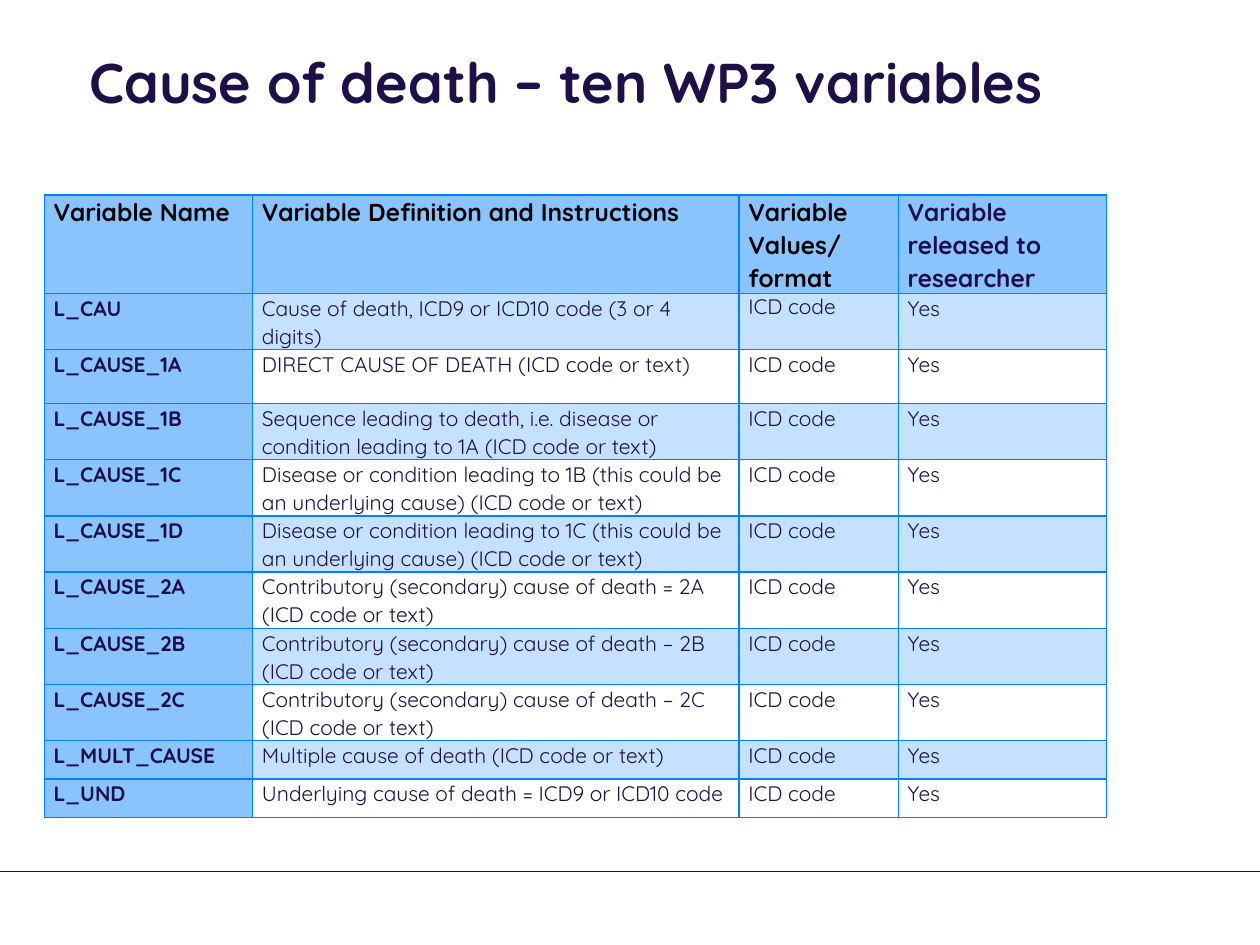
from lxml.etree import SubElement
from pptx import Presentation
from pptx.dml.color import RGBColor
from pptx.enum.shapes import MSO_CONNECTOR as Connector
from pptx.enum.text import MSO_ANCHOR as Anchor, MSO_AUTO_SIZE as AutoSize, PP_ALIGN as Align
from pptx.oxml.ns import qn
from pptx.util import Pt

NAVY, BLACK, WHITE = "1E0F49", "000000", "FFFFFF"
HEADER_BLUE, BAND_BLUE, BORDER_BLUE = "89C4FF", "C4E1FF", "0080FF"


def color(value):
    return RGBColor.from_string(value)


def style_font(paragraph, size, bold, value):
    font = paragraph.font
    font.name = "Quicksand"
    font.size = Pt(size)
    font.bold = bold
    font.color.rgb = color(value)


presentation = Presentation()
presentation.slide_width = Pt(720)
presentation.slide_height = Pt(540)
slide = presentation.slides.add_slide(presentation.slide_layouts[5])
slide.background.fill.solid()
slide.background.fill.fore_color.rgb = color(WHITE)

footer_line = slide.shapes.add_connector(Connector.STRAIGHT, Pt(0), Pt(498), Pt(720), Pt(498))
footer_line.line.color.rgb = color("1D0D49")
footer_line.line.width = Pt(0.25)
SubElement(footer_line.line._get_or_add_ln().getparent(), qn("a:effectLst"))

title = slide.shapes.title
title.left, title.top, title.width, title.height = Pt(44), Pt(21), Pt(595), Pt(51)
title.text_frame.text = "Cause of death – ten WP3 variables"
title.text_frame.word_wrap = True
title.text_frame.auto_size = AutoSize.NONE
title.text_frame.vertical_anchor = Anchor.MIDDLE
title_paragraph = title.text_frame.paragraphs[0]
title_paragraph.alignment = Align.LEFT
style_font(title_paragraph, 32, True, NAVY)

headers = ["Variable Name", "Variable Definition and Instructions",
           "Variable Values/ format", "Variable released to researcher"]
variables = [
    ("L_CAU", "Cause of death, ICD9 or ICD10 code (3 or 4 digits)"),
    ("L_CAUSE_1A", "DIRECT CAUSE OF DEATH (ICD code or text)"),
    ("L_CAUSE_1B", "Sequence leading to death, i.e. disease or condition leading to 1A (ICD code or text)"),
    ("L_CAUSE_1C", "Disease or condition leading to 1B (this could be an underlying cause) (ICD code or text)"),
    ("L_CAUSE_1D", "Disease or condition leading to 1C (this could be an underlying cause) (ICD code or text)"),
    ("L_CAUSE_2A", "Contributory (secondary) cause of death = 2A (ICD code or text)"),
    ("L_CAUSE_2B", "Contributory (secondary) cause of death – 2B (ICD code or text)"),
    ("L_CAUSE_2C", "Contributory (secondary) cause of death – 2C (ICD code or text)"),
    ("L_MULT_CAUSE", "Multiple cause of death (ICD code or text)"),
    ("L_UND", "Underlying cause of death = ICD9 or ICD10 code"),
]
rows = [headers] + [[name, definition, "ICD code", "Yes"] for name, definition in variables]
column_widths = [119, 278, 91, 119]
row_heights = [56, 32, 30.8] + [32] * 6 + [22] * 2

table = slide.shapes.add_table(len(rows), len(headers), Pt(25.3), Pt(111.4),
                               Pt(sum(column_widths)), Pt(sum(row_heights))).table
for column, width in zip(table.columns, column_widths):
    column.width = Pt(width)
for row, height in zip(table.rows, row_heights):
    row.height = Pt(height)

for row_index, texts in enumerate(rows):
    is_header = row_index == 0
    for column_index, text in enumerate(texts):
        cell = table.cell(row_index, column_index)
        cell.text = text
        cell.margin_left = cell.margin_right = Pt(5.4)
        cell.margin_top = cell.margin_bottom = Pt(0)
        is_label = is_header or column_index == 0

        paragraph = cell.text_frame.paragraphs[0]
        paragraph.line_spacing = 1 if (row_index, column_index) == (1, 2) else 1.07
        if column_index < 2:
            paragraph.space_after = Pt(8)
        text_color = BLACK if is_header and column_index < 3 else NAVY
        style_font(paragraph, 14 if is_header else 12, is_label, text_color)

        properties = cell._tc.get_or_add_tcPr()
        for side in ("a:lnL", "a:lnR", "a:lnT", "a:lnB"):
            border = SubElement(properties, qn(side), w=str(Pt(1)))
            border_fill = SubElement(border, qn("a:solidFill"))
            SubElement(border_fill, qn("a:srgbClr"), val=BORDER_BLUE)

        band = BAND_BLUE if row_index % 2 else WHITE
        cell.fill.solid()
        cell.fill.fore_color.rgb = color(HEADER_BLUE if is_label else band)

presentation.save("out.pptx")
